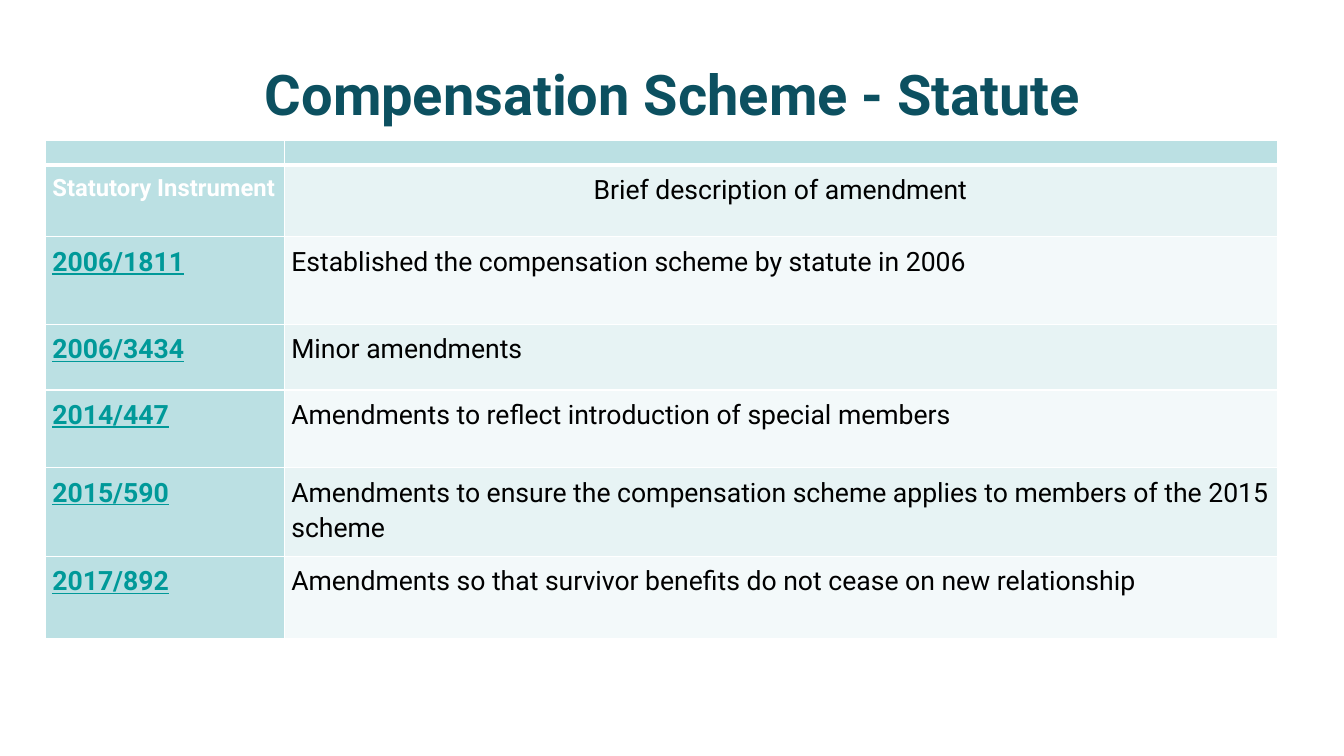
from dataclasses import dataclass

from lxml.etree import SubElement
from pptx import Presentation
from pptx.dml.color import RGBColor
from pptx.enum.text import MSO_ANCHOR, PP_ALIGN
from pptx.oxml.ns import qn
from pptx.util import Inches, Pt


@dataclass(frozen=True)
class Theme:
    font: str = "Roboto"
    title: str = "0C5060"
    header: str = "BBE0E3"
    bands: tuple = ("F3F9FA", "E7F3F4")
    white: str = "FFFFFF"
    body: str = "000000"
    reference: str = "009999"
    title_size: int = 40
    label_size: int = 17
    body_size: int = 19
    spacer_size: int = 8
    thin: int = 1
    thick: int = 3


class StatutePage:
    def __init__(self, deck, theme):
        self.theme = theme
        self.page = deck.slides.add_slide(deck.slide_layouts[5])

    def span(self, para, text, size, color, bold=False, underline=False):
        span = para.add_run()
        span.text = text
        font = span.font
        font.name = self.theme.font
        font.size = Pt(size)
        font.bold = bold
        font.underline = underline
        font.color.rgb = RGBColor.from_string(color)

    def title(self, text, left, top, width, height):
        box = self.page.shapes.title
        box.left, box.top = Inches(left), Inches(top)
        box.width, box.height = Inches(width), Inches(height)
        frame = box.text_frame
        frame.word_wrap = True
        frame.vertical_anchor = MSO_ANCHOR.MIDDLE
        para = frame.paragraphs[0]
        para.alignment = PP_ALIGN.CENTER
        self.span(para, text, self.theme.title_size, self.theme.title, bold=True)

    def table(self, left, top, widths, heights):
        frame = self.page.shapes.add_table(
            len(heights), len(widths), Inches(left), Inches(top),
            Inches(sum(widths)), Inches(sum(heights)))
        table = frame.table
        for column, width in zip(table.columns, widths):
            column.width = Inches(width)
        for row, height in zip(table.rows, heights):
            row.height = Inches(height)
        return table

    def cell(self, cell, fill, top=None, bottom=None):
        thin = self.theme.thin
        cell.margin_left, cell.margin_right = Inches(0.07), Inches(0.08)
        cell.margin_top, cell.margin_bottom = Inches(0.05), Inches(0)
        properties = cell._tc.get_or_add_tcPr()
        edges = {"L": thin, "R": thin, "T": top or thin, "B": bottom or thin}
        for edge, width in edges.items():
            line = SubElement(properties, qn(f"a:ln{edge}"), w=str(Pt(width)))
            solid = SubElement(line, qn("a:solidFill"))
            SubElement(solid, qn("a:srgbClr"), val=self.theme.white)
        cell.fill.solid()
        cell.fill.fore_color.rgb = RGBColor.from_string(fill)

    def spacer(self, cell):
        self.cell(cell, self.theme.header, bottom=self.theme.thick)
        cell.margin_top = Inches(0)
        para = cell.text_frame.paragraphs[0]
        SubElement(para._p, qn("a:endParaRPr"), sz=str(self.theme.spacer_size * 100))

    def entry(self, cell, text, fill, size, color, top=None,
              alignment=PP_ALIGN.LEFT, **style):
        self.cell(cell, fill, top=top)
        para = cell.text_frame.paragraphs[0]
        para.alignment = alignment
        para.line_spacing = 1.15
        self.span(para, text, size, color, **style)


def main():
    theme = Theme()
    deck = Presentation()
    deck.slide_width, deck.slide_height = Inches(13.33), Inches(7.5)
    page = StatutePage(deck, theme)
    page.title("Compensation Scheme - Statute", 0.67, 0.3, 12, 1.25)

    amendments = [
        ("2006/1811", "Established the compensation scheme by statute in 2006"),
        ("2006/3434", "Minor amendments"),
        ("2014/447", "Amendments to reflect introduction of special members"),
        ("2015/590", "Amendments to ensure the compensation scheme applies to "
                     "members of the 2015 scheme"),
        ("2017/892", "Amendments so that survivor benefits do not cease on "
                     "new relationship"),
    ]
    table = page.table(0.45, 1.39, [2.37, 9.85],
                       [0.25, 0.71, 0.87, 0.65, 0.77, 0.88, 0.82])
    for column in range(2):
        page.spacer(table.cell(0, column))
    page.entry(table.cell(1, 0), "Statutory Instrument", theme.header,
               theme.label_size, theme.white, top=theme.thick, bold=True)
    page.entry(table.cell(1, 1), "Brief description of amendment", theme.bands[1],
               theme.body_size, theme.body, top=theme.thick,
               alignment=PP_ALIGN.CENTER)
    for row, (instrument, description) in enumerate(amendments, start=2):
        page.entry(table.cell(row, 0), instrument, theme.header, theme.body_size,
                   theme.reference, bold=True, underline=True)
        page.entry(table.cell(row, 1), description, theme.bands[row % 2],
                   theme.body_size, theme.body)
    deck.save("out.pptx")


if __name__ == "__main__":
    main()
